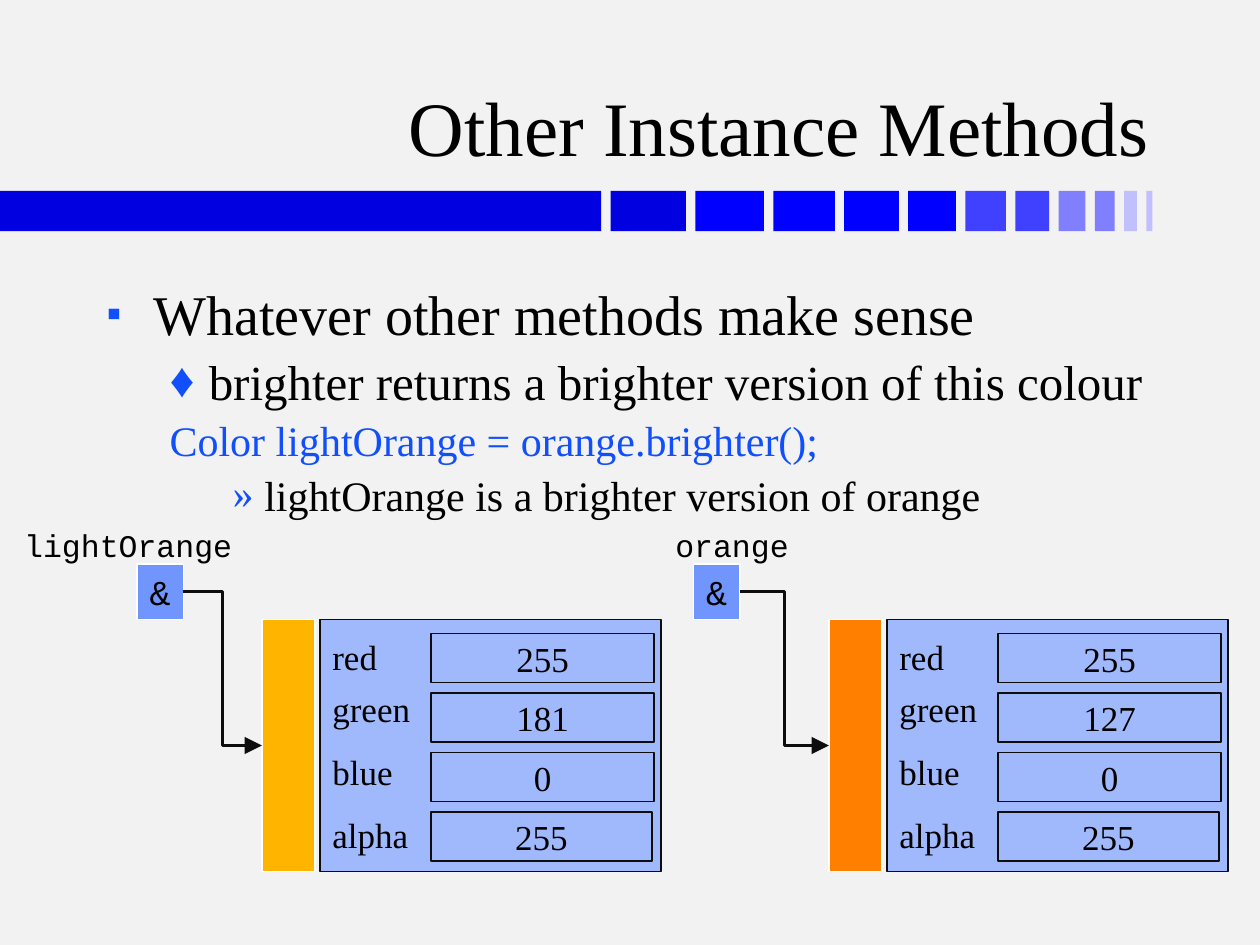
from dataclasses import dataclass

from lxml import etree
from pptx import Presentation
from pptx.dml.color import RGBColor
from pptx.enum.shapes import MSO_CONNECTOR, MSO_SHAPE
from pptx.enum.text import MSO_ANCHOR, PP_ALIGN
from pptx.oxml.ns import qn
from pptx.util import Cm, Pt

RECT = MSO_SHAPE.RECTANGLE
ELBOW = MSO_CONNECTOR.ELBOW
MIDDLE, BOTTOM, TOP = MSO_ANCHOR.MIDDLE, MSO_ANCHOR.BOTTOM, MSO_ANCHOR.TOP
LEFT, CENTER, RIGHT = PP_ALIGN.LEFT, PP_ALIGN.CENTER, PP_ALIGN.RIGHT
LEFT_SITE, RIGHT_SITE = 1, 3


@dataclass(frozen=True)
class Theme:
    serif: str = "Times New Roman"
    mono: str = "Courier New"
    background: str = "F2F2F2"
    text: str = "000000"
    accent: str = "114FFB"
    line: str = "0D0D0D"
    white: str = "FFFFFF"
    panel: str = "A0B9FD"
    pointer: str = "7095FD"
    light_orange: str = "FFB500"
    orange: str = "FF7F00"
    bar: tuple = ("0000E0", "0000FF", "0000FF", "0000FF", "0000FF", "4040FF",
                  "4040FF", "8080FF", "8080FF", "C0C0FF", "C0C0FF")
    title_size: int = 44
    body_sizes: tuple = (32, 28, 24)
    value_size: int = 20
    label_size: int = 18


THEME = Theme()


def rgb(value):
    return RGBColor.from_string(value)


def format_text(p, size, font=THEME.serif, color=THEME.text, align=LEFT):
    p.alignment = align
    for r in p.runs:
        r.font.size = Pt(size)
        r.font.name = font
        r.font.color.rgb = rgb(color)


def add_rect(slide, x, y, w, h, fill, line=None):
    s = slide.shapes.add_shape(RECT, Cm(x), Cm(y), Cm(w), Cm(h))
    s.shadow.inherit = False
    s.fill.solid()
    s.fill.fore_color.rgb = rgb(fill)
    if line:
        s.line.color.rgb = rgb(line)
        s.line.width = Pt(1)
    else:
        s.line.fill.background()
    return s


def add_text(slide, x, y, w, h, anchor=TOP, wrap=True):
    tf = slide.shapes.add_textbox(Cm(x), Cm(y), Cm(w), Cm(h)).text_frame
    tf.word_wrap = wrap
    tf.vertical_anchor = anchor
    return tf


def add_title(slide, x, y, w, h, text):
    tf = add_text(slide, x, y, w, h, BOTTOM)
    tf.text = text
    format_text(tf.paragraphs[0], THEME.title_size, align=RIGHT)


def add_bar(slide, x, y, w, h):
    """A long strip followed by blocks that shrink by an equal step."""
    gap, step, block = 0.19, 0.14, 1.52
    add_rect(slide, x, y, w, h, THEME.bar[0])
    x += w + gap
    for i, color in enumerate(THEME.bar):
        width = block - i * step
        add_rect(slide, x, y, width, h, color)
        x += width + gap


def set_paragraph_layout(p, margin, hanging, before, bullet, bullet_size):
    """Set indent, space before and bullet size (both percent), and bullet."""
    pPr = p._p.get_or_add_pPr()
    pPr.set("marL", str(Cm(margin)))
    pPr.set("indent", str(Cm(-hanging)))
    spacing = etree.SubElement(pPr, qn("a:spcBef"))
    etree.SubElement(spacing, qn("a:spcPct")).set("val", str(before * 1000))
    if bullet:
        color = etree.SubElement(pPr, qn("a:buClr"))
        etree.SubElement(color, qn("a:srgbClr")).set("val", THEME.accent)
        etree.SubElement(pPr, qn("a:buSzPct")).set("val", str(bullet_size * 1000))
        etree.SubElement(pPr, qn("a:buFont")).set("typeface", THEME.serif)
        etree.SubElement(pPr, qn("a:buChar")).set("char", bullet)
    else:
        etree.SubElement(pPr, qn("a:buNone"))


def add_body(slide, x, y, w, h):
    large, medium, small = THEME.body_sizes
    # text, size, colour, margin, hanging, space before, bullet, bullet size
    items = (
        ("Whatever other methods make sense", large, THEME.text,
         0.95, 0.95, 20, "▪", 75),
        ("brighter returns a brighter version of this colour", medium, THEME.text,
         2.06, 0.79, 10, "♦", 100),
        ("Color lightOrange = orange.brighter();", small, THEME.accent,
         2.06, 0.79, 10, None, 100),
        ("lightOrange is a brighter version of orange", small, THEME.text,
         3.18, 0.64, 10, "»", 100),
    )
    tf = add_text(slide, x, y, w, h)
    for i, (text, size, color, *layout) in enumerate(items):
        p = tf.add_paragraph() if i else tf.paragraphs[0]
        p.text = text
        format_text(p, size, color=color)
        set_paragraph_layout(p, *layout)


def add_object(slide, x, y, h, color, values):
    """Draw a colour swatch and its field panel; return the swatch."""
    swatch = add_rect(slide, x, y, 1.07, h, color, THEME.white)
    panel_x = x + 1.17
    panel = add_rect(slide, panel_x, y, 6.88, h, THEME.panel, THEME.line)
    tf = panel.text_frame
    tf.vertical_anchor = MIDDLE
    for i, name in enumerate(("red", "green", "blue", "alpha")):
        p = tf.add_paragraph() if i else tf.paragraphs[0]
        p.text = name
        p.space_before = Pt(6 if i else 12)
        p.space_after = Pt(6 if i else 0)
        format_text(p, THEME.value_size)
    for i, value in enumerate(values):
        width = 4.45 if i == len(values) - 1 else 4.5
        cell = add_rect(slide, panel_x + 2.24, y + 0.28 + i * 1.2, width, 0.99,
                        THEME.panel, THEME.line)
        cell.text_frame.vertical_anchor = MIDDLE
        cell.text_frame.text = str(value)
        format_text(cell.text_frame.paragraphs[0], THEME.value_size, align=CENTER)
    return swatch


def add_variable(slide, x, y, w, name):
    """Draw a right-aligned name above a reference cell; return the cell."""
    tf = add_text(slide, x, y, w, 1.02, wrap=False)
    tf.text = name
    format_text(tf.paragraphs[0], THEME.label_size, THEME.mono, align=RIGHT)
    cell = add_rect(slide, x + w - 2.17, y + 0.89, 0.94, 1.12,
                    THEME.pointer, THEME.white)
    tf = cell.text_frame
    tf.word_wrap = False
    tf.vertical_anchor = TOP
    tf.text = "&"
    format_text(tf.paragraphs[0], THEME.value_size, THEME.mono, align=CENTER)
    return cell


def add_arrow(slide, start, end):
    c = slide.shapes.add_connector(ELBOW, 0, 0, 0, 0)
    c.begin_connect(start, RIGHT_SITE)
    c.end_connect(end, LEFT_SITE)
    c.line.color.rgb = rgb(THEME.line)
    c.line.width = Pt(1.5)
    head = etree.SubElement(c.line._get_or_add_ln(), qn("a:tailEnd"))
    for key, value in (("type", "triangle"), ("w", "lg"), ("len", "lg")):
        head.set(key, value)
    etree.SubElement(c._element.spPr, qn("a:effectLst"))


def add_reference(slide, x, y, name, name_w, object_x, color, values):
    cell = add_variable(slide, x, y, name_w, name)
    swatch = add_object(slide, object_x, y + 2.01, 5.08, color, values)
    add_arrow(slide, cell, swatch)


def main():
    prs = Presentation()
    prs.slide_width, prs.slide_height = Cm(25.4), Cm(19.05)
    slide = prs.slides.add_slide(prs.slide_layouts[6])
    slide.background.fill.solid()
    slide.background.fill.fore_color.rgb = rgb(THEME.background)
    add_bar(slide, 0, 3.85, 12.12, 0.81)
    add_title(slide, 1.88, 0.48, 21.54, 3.12, "Other Instance Methods")
    add_body(slide, 1.9, 5.51, 21.6, 11.43)
    add_reference(slide, 13.33, 10.48, "orange", 2.82, 16.71,
                  THEME.orange, (255, 127, 0, 255))
    add_reference(slide, 0.2, 10.48, "lightOrange", 4.73, 5.28,
                  THEME.light_orange, (255, 181, 0, 255))
    prs.save("out.pptx")


if __name__ == "__main__":
    main()
